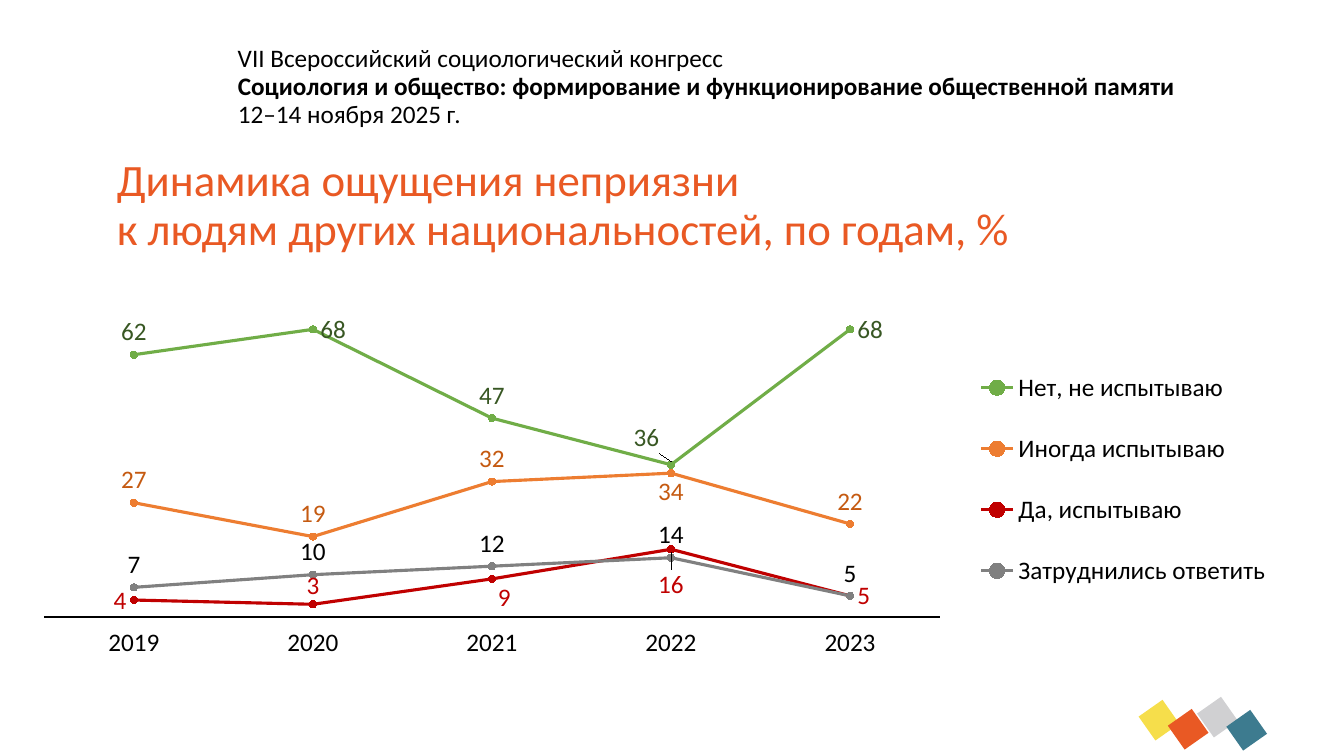
from lxml.etree import SubElement
from pptx import Presentation
from pptx.chart.data import CategoryChartData
from pptx.dml.color import RGBColor
from pptx.enum.chart import (XL_CHART_TYPE, XL_LABEL_POSITION, XL_LEGEND_POSITION,
                             XL_MARKER_STYLE, XL_TICK_LABEL_POSITION, XL_TICK_MARK)
from pptx.enum.shapes import MSO_SHAPE
from pptx.enum.text import MSO_AUTO_SIZE
from pptx.oxml import parse_xml
from pptx.oxml.ns import nsdecls, qn
from pptx.util import Inches, Pt

ABOVE, BELOW = XL_LABEL_POSITION.ABOVE, XL_LABEL_POSITION.BELOW
LEFT, RIGHT = XL_LABEL_POSITION.LEFT, XL_LABEL_POSITION.RIGHT


class Theme:
    font = "Calibri"
    body_size, title_size = 18, 32
    axis_width, series_width, marker_size = 1.5, 2.25, 5
    black, accent = "000000", "E95924"
    squares = ("F6DE4B", accent, "D0D0D2", "3D7B8F")


HEADER = [
    ("VII Всероссийский социологический конгресс", 0.37, 5.24, False),
    ("Социология и общество: формирование и функционирование общественной памяти",
     0.65, 9.92, True),
    ("12–14 ноября 2025 г.", 0.93, 3.28, False),
]
TITLE = ["Динамика ощущения неприязни ", "к людям других национальностей, по годам, %"]
YEARS = ["2019", "2020", "2021", "2022", "2023"]
# name, values, line colour, label colour, label position,
# moved labels {point: (position, x shift, y shift)}
ANSWERS = [
    ("Нет, не испытываю", (62, 68, 47, 36, 68), "70AD47", "385723", RIGHT,
     {0: (ABOVE, 0, 0), 2: (ABOVE, 0, 0), 3: (ABOVE, -0.02, -0.01)}),
    ("Иногда испытываю", (27, 19, 32, 34, 22), "ED7D31", "C55A11", ABOVE,
     {3: (BELOW, 0, -0.01)}),
    ("Да, испытываю", (4, 3, 9, 16, 5), "C00000", "C00000", RIGHT,
     {0: (LEFT, 0, 0), 1: (ABOVE, 0, 0.01), 2: (BELOW, 0.01, -0.01),
      3: (BELOW, 0, 0.03)}),
    ("Затруднились ответить", (7, 10, 12, 14, 5), "808080", "000000", ABOVE, {}),
]


def apply_format(target, values):
    for name, value in values.items():
        setattr(target, name, value)


def layout_xml(**values):
    """Return a manual chart layout; the keywords are its child elements in order."""
    layout = parse_xml(f"<c:layout {nsdecls('c')}><c:manualLayout/></c:layout>")
    for name, value in values.items():
        SubElement(layout[0], qn(f"c:{name}")).set("val", str(value))
    return layout


class SlideBuilder:
    def __init__(self, page, theme):
        self.page, self.theme = page, theme

    def style_font(self, font, color, size=Theme.body_size, bold=False):
        apply_format(font, {"name": self.theme.font, "size": Pt(size), "bold": bold})
        font.color.rgb = RGBColor.from_string(color)

    def style_line(self, line, color, width):
        line.color.rgb = RGBColor.from_string(color)
        line.width = Pt(width)

    def text(self, lines, left, top, width, height, color, size, bold=False, **frame_format):
        box = self.page.shapes.add_textbox(*map(Inches, (left, top, width, height)))
        apply_format(box.text_frame, {"word_wrap": True, **frame_format})
        para = box.text_frame.paragraphs[0]
        for number, line in enumerate(lines):
            if number:
                para.add_line_break()
            span = para.add_run()
            span.text = line
            self.style_font(span.font, color, size, bold)
        return para

    def square(self, left, top, side, color):
        shape = self.page.shapes.add_shape(
            MSO_SHAPE.RECTANGLE, *map(Inches, (left, top, side, side)))
        shape.rotation = 54.9
        shape.shadow.inherit = False
        shape.fill.solid()
        shape.fill.fore_color.rgb = RGBColor.from_string(color)
        shape.line.fill.background()

    def line_chart(self, years, answers, left, top, width, height):
        data = CategoryChartData()
        data.categories = years
        for name, values, *_ in answers:
            data.add_series(name, values)
        chart = self.page.shapes.add_chart(
            XL_CHART_TYPE.LINE_MARKERS, *map(Inches, (left, top, width, height)), data).chart
        apply_format(chart, {"has_title": False, "has_legend": True})
        self.style_font(chart.font, self.theme.black)
        self.style_axes(chart)
        self.style_legend(chart.legend)
        chart.plots[0].vary_by_categories = False
        for series, (_, _, *style) in zip(chart.plots[0].series, answers):
            self.style_series(series, *style)

        plot_area = chart.plots[0]._element.getparent()
        for old in plot_area.findall(qn("c:layout")):
            plot_area.remove(old)
        plot_area.insert(0, layout_xml(layoutTarget="inner", xMode="edge", yMode="edge",
                                       x=0, y=0.018, w=0.726, h=0.813))

    def style_axes(self, chart):
        apply_format(chart.value_axis, {"visible": False, "has_major_gridlines": False,
                                        "minimum_scale": 0, "maximum_scale": 80})
        axis = chart.category_axis
        apply_format(axis, {"major_tick_mark": XL_TICK_MARK.NONE,
                            "minor_tick_mark": XL_TICK_MARK.NONE,
                            "tick_label_position": XL_TICK_LABEL_POSITION.LOW})
        self.style_font(axis.tick_labels.font, self.theme.black)
        self.style_line(axis.format.line, self.theme.black, self.theme.axis_width)

    def style_legend(self, legend):
        apply_format(legend, {"position": XL_LEGEND_POSITION.RIGHT,
                              "include_in_layout": False})
        self.style_font(legend.font, self.theme.black)
        for old in legend._element.findall(qn("c:layout")):
            legend._element.remove(old)
        legend._element.find(qn("c:legendPos")).addnext(
            layout_xml(xMode="edge", yMode="edge", x=0.75, y=0.17, w=0.25, h=0.66))

    def style_series(self, series, color, label_color, position, moved_labels):
        series.smooth = False
        self.style_line(series.format.line, color, self.theme.series_width)
        marker = series.marker
        apply_format(marker, {"style": XL_MARKER_STYLE.CIRCLE,
                              "size": self.theme.marker_size})
        marker.format.fill.solid()
        marker.format.fill.fore_color.rgb = RGBColor.from_string(color)
        marker.format.line.color.rgb = RGBColor.from_string(color)
        apply_format(series.data_labels, {"show_value": True, "position": position})
        self.style_font(series.data_labels.font, label_color)
        for point, (place, x, y) in moved_labels.items():
            label = series.points[point].data_label
            self.style_font(label.font, label_color)
            label.position = place
            if x or y:
                element = series.data_labels._element.xpath(
                    f"c:dLbl[c:idx/@val='{point}']")[0]
                element.find(qn("c:idx")).addnext(layout_xml(x=x, y=y))


def main():
    deck = Presentation()
    apply_format(deck, {"slide_width": Inches(13.33), "slide_height": Inches(7.5)})
    theme = Theme()
    slide = SlideBuilder(deck.slides.add_slide(deck.slide_layouts[6]), theme)

    for line, top, width, bold in HEADER:
        slide.text([line], 2.26, top, width, 0.4, theme.black, theme.body_size, bold,
                   auto_size=MSO_AUTO_SIZE.SHAPE_TO_FIT_TEXT)
    side = 0.29
    for number, (color, top) in enumerate(zip(theme.squares, (7, 7.09, 6.97, 7.1))):
        slide.square(11.35 + number * side, top, side, color)
    title = slide.text(TITLE, 1.06, 1.52, 10.98, 1.39, theme.accent, theme.title_size)
    title.line_spacing = 0.9
    slide.line_chart(YEARS, ANSWERS, 0.43, 2.69, 12.24, 4.13)
    deck.save("out.pptx")


if __name__ == "__main__":
    main()
